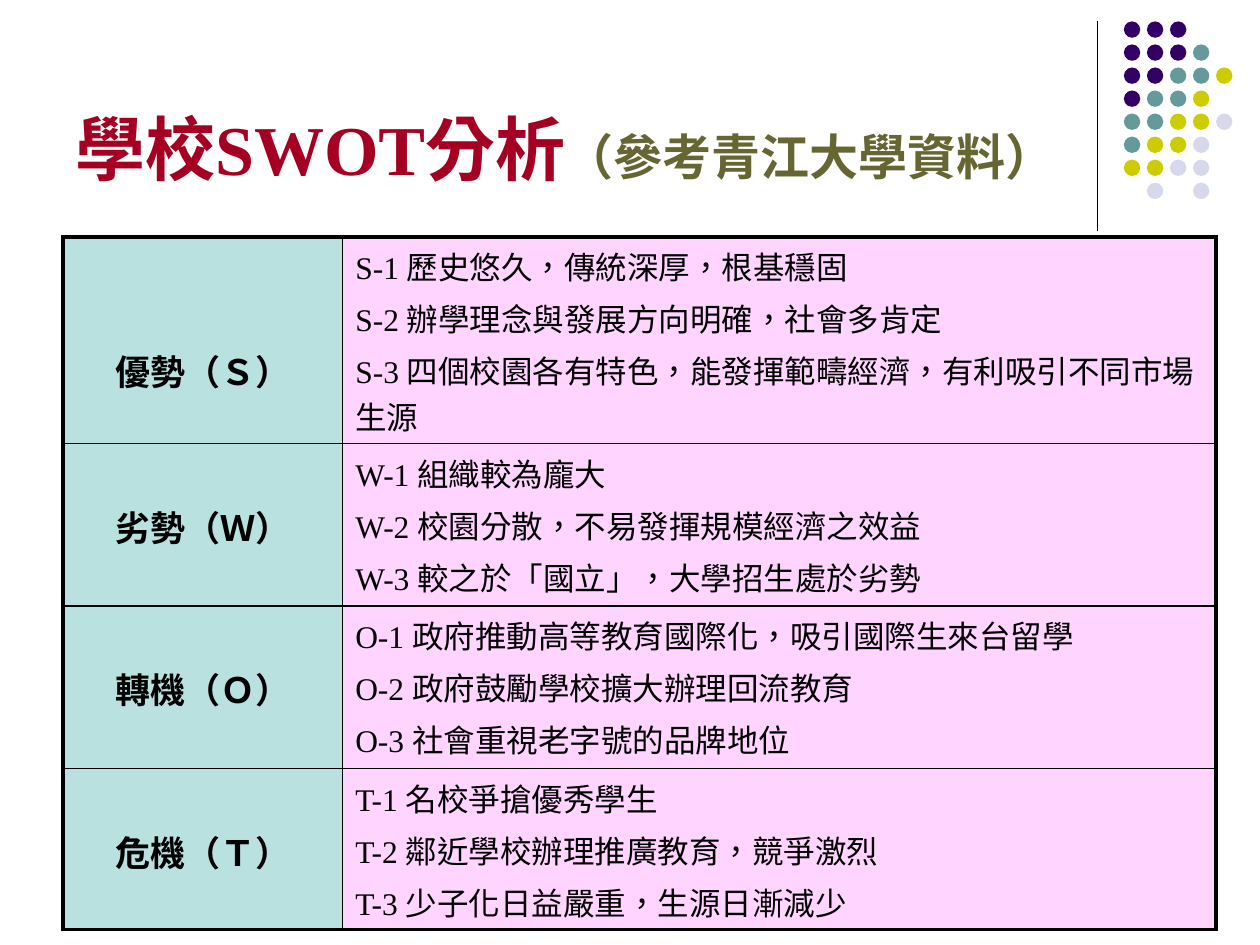
import pptx
import pptx.dml.color
import pptx.enum.shapes
import pptx.enum.text
import pptx.oxml
import pptx.oxml.ns
import pptx.util

Inches, Pt = pptx.util.Inches, pptx.util.Pt
RGBColor = pptx.dml.color.RGBColor
MSO_SHAPE = pptx.enum.shapes.MSO_SHAPE
PP_ALIGN = pptx.enum.text.PP_ALIGN

FONT = "Times New Roman"
LANGUAGE = "zh-TW"
BLACK = RGBColor(0x00, 0x00, 0x00)
RED = RGBColor(0xA5, 0x00, 0x21)
OLIVE = RGBColor(0x66, 0x66, 0x33)
MINT = RGBColor(0xB9, 0xE1, 0xDF)
PINK = RGBColor(0xFF, 0xD5, 0xFF)
DOT_COLORS = {
    "P": RGBColor(0x33, 0x00, 0x66),
    "T": RGBColor(0x66, 0x99, 0x99),
    "Y": RGBColor(0xCC, 0xCC, 0x00),
    "L": RGBColor(0xD8, 0xD8, 0xEC),
}

# Content
TITLE = [("學校SWOT分析", 40, RED), ("（參考青江大學資料）", 28, OLIVE)]
DOTS = ["PPP", "PPPT", "PPTTY", "PTTY", "TTYYL", "TYYL", "YYLL", " L L"]
# Label, label line spacing, row height, points
SWOT = [
    ("優勢（Ｓ）", 3.0, 1.64, [
        "S-1 歷史悠久，傳統深厚，根基穩固",
        "S-2 辦學理念與發展方向明確，社會多肯定",
        "S-3 四個校園各有特色，能發揮範疇經濟，有利吸引不同市場生源"]),
    ("劣勢（Ｗ）", 2.0, 1.29, [
        "W-1 組織較為龐大",
        "W-2 校園分散，不易發揮規模經濟之效益",
        "W-3 較之於「國立」，大學招生處於劣勢"]),
    ("轉機（Ｏ）", 2.0, 1.29, [
        "O-1 政府推動高等教育國際化，吸引國際生來台留學",
        "O-2 政府鼓勵學校擴大辦理回流教育",
        "O-3 社會重視老字號的品牌地位"]),
    ("危機（Ｔ）", 2.0, 1.28, [
        "T-1 名校爭搶優秀學生",
        "T-2 鄰近學校辦理推廣教育，競爭激烈",
        "T-3 少子化日益嚴重，生源日漸減少"]),
]
COLUMNS = [2.22, 6.93]


def style_run(r, size, color, bold):
    r.font.name = FONT
    r.font.size = Pt(size)
    r.font.bold = bold
    r.font.color.rgb = color
    r._r.get_or_add_rPr().set("lang", LANGUAGE)


def fill_cell(cell, lines, size, bold, fill):
    cell.fill.solid()
    cell.fill.fore_color.rgb = fill
    cell.text_frame.text = "\n".join(lines)
    for p in cell.text_frame.paragraphs:
        p.space_before = Pt(size * 0.2)
        style_run(p.runs[0], size, BLACK, bold)


def set_borders(cell, widths):
    tc_pr = cell._tc.get_or_add_tcPr()
    for i, (side, width) in enumerate(widths.items()):
        tc_pr.insert(i, pptx.oxml.parse_xml(
            f'<a:{side} {pptx.oxml.ns.nsdecls("a")} w="{Pt(width)}">'
            f'<a:solidFill><a:srgbClr val="{BLACK}"/></a:solidFill></a:{side}>'))


prs = pptx.Presentation()
prs.slide_width, prs.slide_height = Inches(10), Inches(7.5)
s = prs.slides.add_slide(prs.slide_layouts[6])

# Vertical rule
rule = s.shapes.add_connector(pptx.enum.shapes.MSO_CONNECTOR.STRAIGHT,
                              Inches(8.71), Inches(0.17), Inches(8.71), Inches(1.83))
rule.line.color.rgb = BLACK
rule.line.width = Pt(0.75)
rule._element.spPr.append(pptx.oxml.parse_xml(
    f'<a:effectLst {pptx.oxml.ns.nsdecls("a")}/>'))

# Dot pattern
dots = s.shapes.add_group_shape()
pitch = 1.28 / 7
for row, codes in enumerate(DOTS):
    for col, code in enumerate(codes):
        if code in DOT_COLORS:
            sp = dots.shapes.add_shape(
                MSO_SHAPE.OVAL, Inches(8.92 + col * pitch), Inches(0.17 + row * pitch),
                Inches(0.13), Inches(0.13))
            sp.shadow.inherit = False
            sp.fill.solid()
            sp.fill.fore_color.rgb = DOT_COLORS[code]
            sp.line.fill.background()

# Title
title = s.shapes.add_textbox(Inches(0.5), Inches(0.13), Inches(8.25), Inches(1.42))
tf = title.text_frame
tf.word_wrap = True
tf.vertical_anchor = pptx.enum.text.MSO_ANCHOR.BOTTOM
for text, size, color in TITLE:
    r = tf.paragraphs[0].add_run()
    r.text = text
    style_run(r, size, color, True)

# SWOT table
frame = s.shapes.add_table(len(SWOT), len(COLUMNS), Inches(0.5), Inches(1.88),
                           Inches(sum(COLUMNS)), Inches(sum(row[2] for row in SWOT)))
table = frame.table
table.first_row = table.horz_banding = False
for column, width in zip(table.columns, COLUMNS):
    column.width = Inches(width)
for i, (label, spacing, height, points) in enumerate(SWOT):
    table.rows[i].height = Inches(height)
    label_cell, points_cell = table.cell(i, 0), table.cell(i, 1)
    fill_cell(label_cell, [label], 20, True, MINT)
    p = label_cell.text_frame.paragraphs[0]
    p.alignment = PP_ALIGN.CENTER
    p.line_spacing = spacing
    fill_cell(points_cell, points, 18, False, PINK)
    top = 2.25 if i == 0 else 1
    bottom = 2.25 if i == len(SWOT) - 1 else 1
    set_borders(label_cell, {"lnL": 2.25, "lnR": 1, "lnT": top, "lnB": bottom})
    set_borders(points_cell, {"lnL": 1, "lnR": 2.25, "lnT": top, "lnB": bottom})

prs.save("out.pptx")
